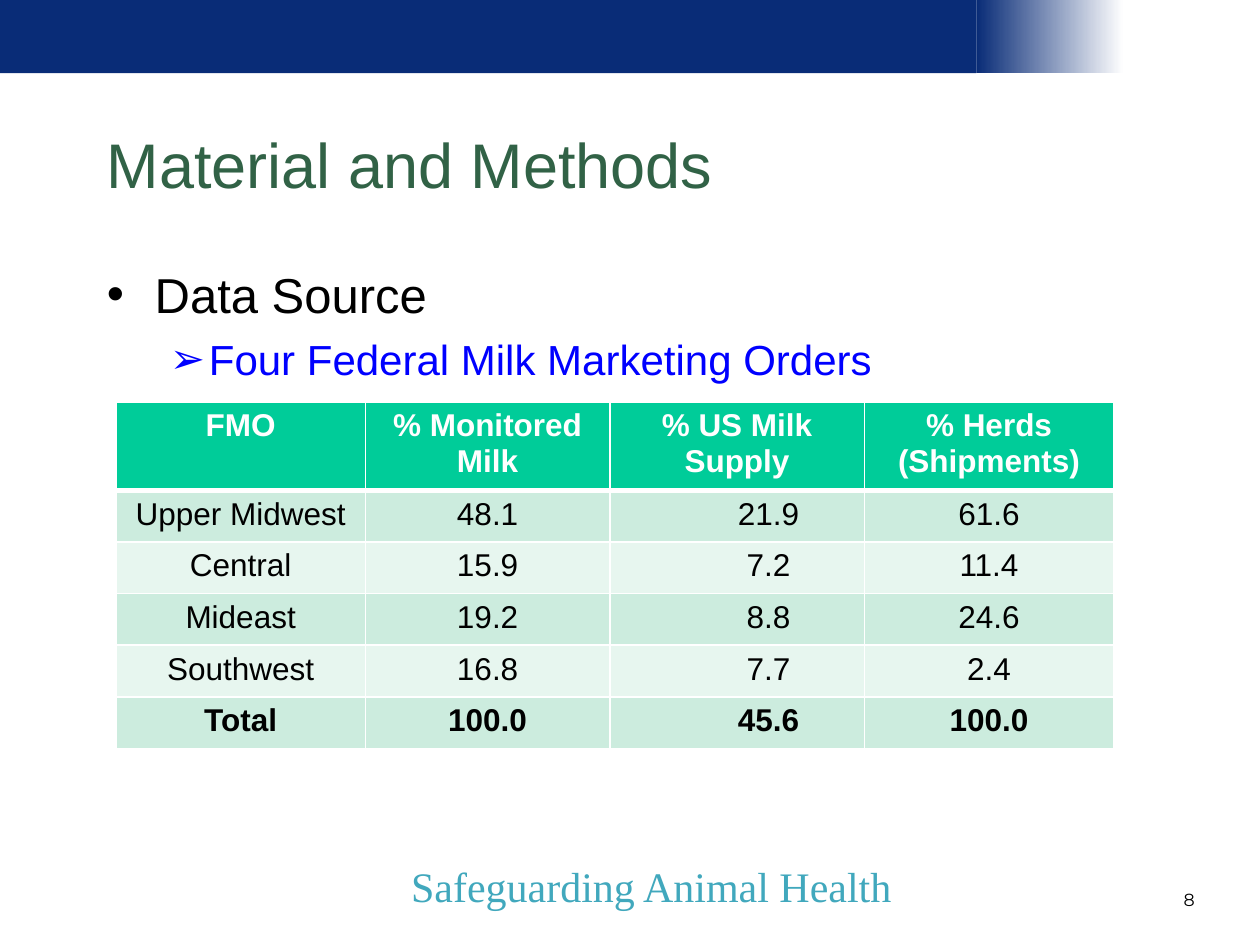
from lxml import etree
from pptx import Presentation
from pptx.dml.color import RGBColor
from pptx.enum.shapes import MSO_SHAPE
from pptx.enum.text import MSO_ANCHOR, PP_ALIGN
from pptx.oxml.ns import qn
from pptx.util import Inches, Pt

RECT = MSO_SHAPE.RECTANGLE
MIDDLE = MSO_ANCHOR.MIDDLE
LEFT, CENTER, RIGHT = PP_ALIGN.LEFT, PP_ALIGN.CENTER, PP_ALIGN.RIGHT
NAVY, WHITE, BLACK = "092C77", "FFFFFF", "000000"
HEADER_FILL, BAND_FILLS = "00CC99", ("CCECDE", "E7F6EF")
COLUMN_WIDTHS = (1.98, 1.94, 2.02, 1.98)
HEADER_HEIGHT, ROW_HEIGHT = 0.65, 0.41
SUPPLY_COLUMN = 2
ORDERS = (
    ("FMO", "% Monitored Milk", "% US Milk Supply", "% Herds (Shipments)"),
    ("Upper Midwest", "48.1", "21.9", "61.6"),
    ("Central", "15.9", "7.2", "11.4"),
    ("Mideast", "19.2", "8.8", "24.6"),
    ("Southwest", "16.8", "7.7", "2.4"),
    ("Total", "100.0", "45.6", "100.0"),
)


def rgb(color):
    """Turn a hex string into a colour."""
    return RGBColor.from_string(color)


def format_paragraph(p, size, color, font="Arial", align=LEFT, bold=False):
    """Align a paragraph and format its runs."""
    p.alignment = align
    for r in p.runs:
        r.font.size, r.font.name, r.font.bold = Pt(size), font, bold
        r.font.color.rgb = rgb(color)


def add_bar(s, left, width, fade_to=None):
    """Add a part of the top band, plain or fading to a colour."""
    sp = s.shapes.add_shape(RECT, Inches(left), 0, Inches(width), Inches(0.58))
    sp.shadow.inherit = False
    sp.line.fill.background()
    if fade_to:
        sp.fill.gradient()
        sp.fill.gradient_angle = 0
        for stop, color in zip(sp.fill.gradient_stops, (NAVY, fade_to)):
            stop.color.rgb = rgb(color)
    else:
        sp.fill.solid()
        sp.fill.fore_color.rgb = rgb(NAVY)


def add_text(s, box, text, size, color, **style):
    """Add a wrapped text box and return its frame."""
    tf = s.shapes.add_textbox(*map(Inches, box)).text_frame
    tf.word_wrap = True
    tf.text = text
    format_paragraph(tf.paragraphs[0], size, color, **style)
    return tf


def indent(p, margin, first=0):
    """Set the left margin and first-line indent of a paragraph."""
    p_pr = p._p.get_or_add_pPr()
    p_pr.set("marL", str(Inches(margin)))
    p_pr.set("indent", str(Inches(first)))
    return p_pr


def set_bullet(p, char, margin, hang):
    """Give a paragraph a hanging bullet."""
    p_pr = indent(p, margin, -hang)
    etree.SubElement(p_pr, qn("a:buFont")).set("typeface", "Arial")
    etree.SubElement(p_pr, qn("a:buChar")).set("char", char)


def add_source_list(s):
    """Add the bulleted data source."""
    tf = add_text(s, (0.75, 2, 8.5, 3.75), "Data Source", 28, BLACK)
    tf.margin_top = Inches(0.1)
    set_bullet(tf.paragraphs[0], "•", 0.38, 0.38)
    p = tf.add_paragraph()
    p.text = "Four Federal Milk Marketing Orders"
    p.level = 1
    p.space_before = Pt(6)
    set_bullet(p, "➢", 0.81, 0.31)
    format_paragraph(p, 24, "0000FF")


def set_borders(cell, bottom):
    """Draw white borders round a cell, the bottom one in its own width."""
    tc_pr = cell._tc.get_or_add_tcPr()
    for i, (side, width) in enumerate(zip("LRTB", (1, 1, 1, bottom))):
        ln = etree.Element(qn(f"a:ln{side}"), w=str(Pt(width)))
        fill = etree.SubElement(ln, qn("a:solidFill"))
        etree.SubElement(fill, qn("a:srgbClr")).set("val", WHITE)
        tc_pr.insert(i, ln)


def format_cell(cell, text, row, col):
    """Fill in one table cell by its place."""
    header, total = row == 0, row == len(ORDERS) - 1
    cell.text = text
    p = cell.text_frame.paragraphs[0]
    format_paragraph(p, 18, WHITE if header else BLACK, align=CENTER,
                     bold=header or total)
    if col == SUPPLY_COLUMN and not header:
        p.level = 1
        indent(p, 0.5)
    cell.fill.solid()
    cell.fill.fore_color.rgb = rgb(HEADER_FILL if header else BAND_FILLS[(row - 1) % 2])
    set_borders(cell, 3 if header else 1)


def add_orders_table(s):
    """Add the table of milk marketing orders."""
    height = HEADER_HEIGHT + ROW_HEIGHT * (len(ORDERS) - 1)
    table = s.shapes.add_table(
        len(ORDERS), len(COLUMN_WIDTHS), Inches(0.92), Inches(3.19),
        Inches(sum(COLUMN_WIDTHS)), Inches(height)).table
    for column, width in zip(table.columns, COLUMN_WIDTHS):
        column.width = Inches(width)
    for i, values in enumerate(ORDERS):
        table.rows[i].height = Inches(ROW_HEIGHT if i else HEADER_HEIGHT)
        for j, text in enumerate(values):
            format_cell(table.cell(i, j), text, i, j)


def main():
    """Build the slide and save it."""
    prs = Presentation()
    prs.slide_width, prs.slide_height = Inches(10), Inches(7.5)
    s = prs.slides.add_slide(prs.slide_layouts[6])
    add_bar(s, 7.75, 1.17, fade_to=WHITE)
    add_bar(s, 0, 7.75)
    add_text(s, (2.38, 6.78, 5.58, 0.5), "Safeguarding Animal Health", 24,
             "41A8BD", font="Times New Roman", align=CENTER)
    title = add_text(s, (0.75, 0.67, 8.5, 1.25), "Material and Methods", 36, "316246")
    title.vertical_anchor = MIDDLE
    add_source_list(s)
    add_text(s, (8.25, 7.01, 1.33, 0.33), "8", 10, BLACK,
             font="Montserrat", align=RIGHT)
    add_orders_table(s)
    prs.save("out.pptx")


if __name__ == "__main__":
    main()
